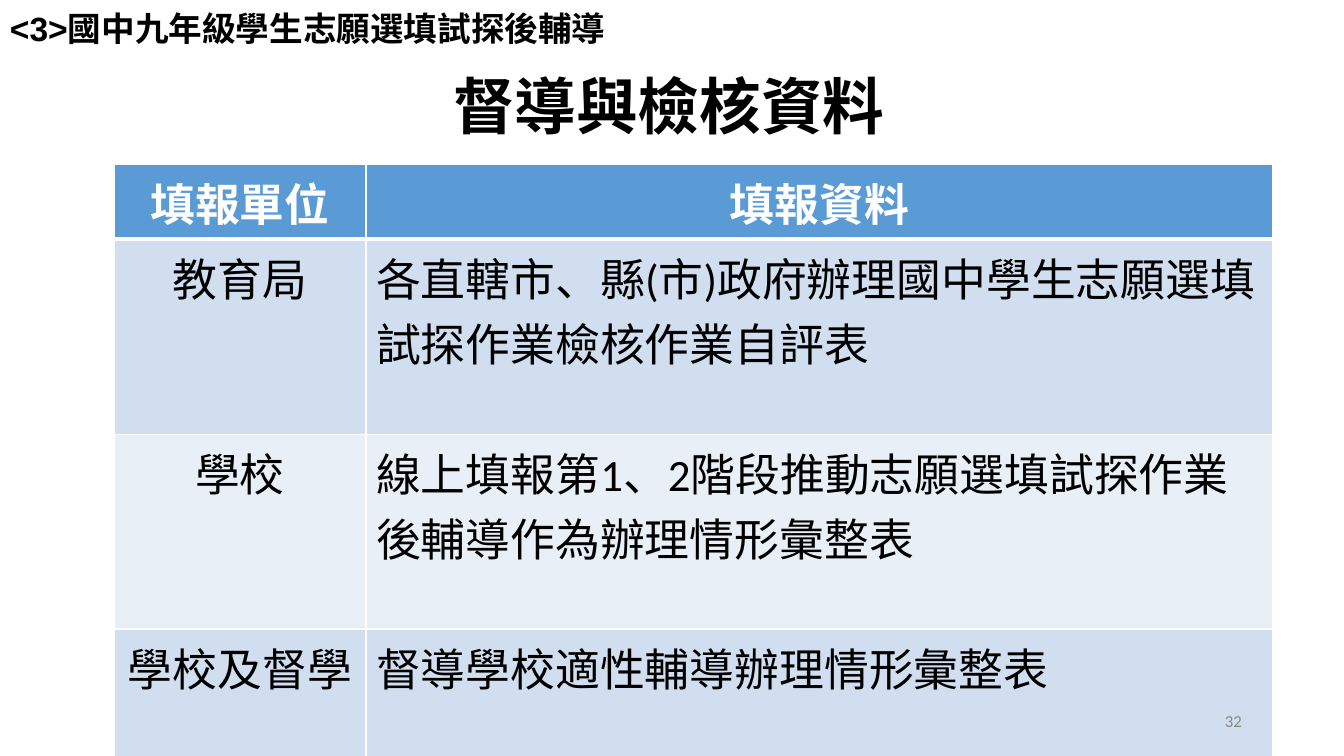
"""Build the slide on supervision and review data."""
import dataclasses
import typing

import lxml.etree
import pptx
import pptx.dml.color
import pptx.enum.text
import pptx.oxml.ns
import pptx.util

SCALE = 914400 / 100.8
ALIGN = pptx.enum.text.PP_ALIGN
ANCHOR = pptx.enum.text.MSO_ANCHOR


@dataclasses.dataclass(frozen=True)
class Theme:
    ink: str = "000000"
    white: str = "FFFFFF"
    gray: str = "888888"
    head: str = "5B9BD5"
    bands: tuple[str, str] = ("D0DEEF", "E9EFF7")
    sans: str = "Arial"
    body: str = "Calibri"
    title: int = 44
    cell: int = 32
    topic: int = 24
    number: int = 12
    thin: int = 1
    thick: int = 3


THEME = Theme()


@dataclasses.dataclass(frozen=True)
class Style:
    size: int
    color: str = THEME.ink
    bold: bool = False
    font: str = THEME.body
    align: ALIGN = ALIGN.LEFT
    anchor: ANCHOR = ANCHOR.TOP
    lead: float = 1.0


@dataclasses.dataclass(frozen=True)
class Label:
    text: str
    box: tuple[int, int, int, int]
    style: Style


@dataclasses.dataclass(frozen=True)
class Row:
    unit: str
    data: str
    height: int


TITLE = Label("督導與檢核資料", (443, 71, 481, 78),
              Style(THEME.title, bold=True, lead=0.9))
TOPIC = Label("<3>國中九年級學生志願選填試探後輔導", (0, 3, 672, 50),
              Style(THEME.topic, bold=True, font=THEME.sans))
NUMBER = Label("32", (950, 701, 302, 40),
               Style(THEME.number, THEME.gray, align=ALIGN.RIGHT, anchor=ANCHOR.MIDDLE))
ROWS = (
    Row("填報單位", "填報資料", 74),
    Row("教育局", "各直轄市、縣(市)政府辦理國中學生志願選填試探作業檢核作業自評表", 195),
    Row("學校", "線上填報第1、2階段推動志願選填試探作業後輔導作為辦理情形彙整表", 195),
    Row("學校及督學", "督導學校適性輔導辦理情形彙整表", 128),
)
WIDTHS = (252, 907)
CORNER = (114, 164)


def px(count: int) -> int:
    """Turn pixels into EMU."""
    return round(count * SCALE)


def tint(code: str) -> pptx.dml.color.RGBColor:
    """Turn a hex code into a colour."""
    return pptx.dml.color.RGBColor.from_string(code)


def write(frame: typing.Any, text: str, style: Style) -> None:
    """Add one styled run to a text frame."""
    line = frame.paragraphs[0]
    line.alignment = style.align
    line.line_spacing = style.lead
    run = line.add_run()
    run.text = text
    run.font.name = style.font
    run.font.size = pptx.util.Pt(style.size)
    run.font.bold = style.bold
    run.font.color.rgb = tint(style.color)


def place(shape: typing.Any, label: Label) -> None:
    """Set the box and the text of a shape."""
    shape.left, shape.top, shape.width, shape.height = map(px, label.box)
    frame = shape.text_frame
    frame.word_wrap = True
    frame.auto_size = pptx.enum.text.MSO_AUTO_SIZE.NONE
    frame.vertical_anchor = label.style.anchor
    write(frame, label.text, label.style)


def edge(cell: typing.Any, base: int) -> None:
    """Draw white borders round a cell."""
    name = pptx.oxml.ns.qn
    props = cell._tc.get_or_add_tcPr()
    for side in "LRTB":
        width = base if side == "B" else THEME.thin
        line = lxml.etree.SubElement(props, name(f"a:ln{side}"), w=str(pptx.util.Pt(width)))
        fill = lxml.etree.SubElement(line, name("a:solidFill"))
        lxml.etree.SubElement(fill, name("a:srgbClr"), val=THEME.white)


def draw(slide: typing.Any) -> None:
    """Draw the table of units and data."""
    size = (sum(WIDTHS), sum(row.height for row in ROWS))
    table = slide.shapes.add_table(len(ROWS), len(WIDTHS), *map(px, CORNER + size)).table
    for column, width in zip(table.columns, WIDTHS):
        column.width = px(width)
    for i, row in enumerate(ROWS):
        table.rows[i].height = px(row.height)
        head = i == 0
        shade = THEME.head if head else THEME.bands[(i - 1) % 2]
        color = THEME.white if head else THEME.ink
        for j, text in enumerate((row.unit, row.data)):
            cell = table.cell(i, j)
            edge(cell, THEME.thick if head else THEME.thin)
            cell.fill.solid()
            cell.fill.fore_color.rgb = tint(shade)
            align = ALIGN.CENTER if head or j == 0 else ALIGN.LEFT
            write(cell.text_frame, text, Style(THEME.cell, color, head, align=align))


def main() -> None:
    """Build and save the slide."""
    deck = pptx.Presentation()
    deck.slide_width, deck.slide_height = px(1344), px(756)
    slide = deck.slides.add_slide(deck.slide_layouts[5])
    place(slide.shapes.title, TITLE)
    draw(slide)
    for label in (TOPIC, NUMBER):
        place(slide.shapes.add_textbox(*map(px, label.box)), label)
    deck.save("out.pptx")


if __name__ == "__main__":
    main()
